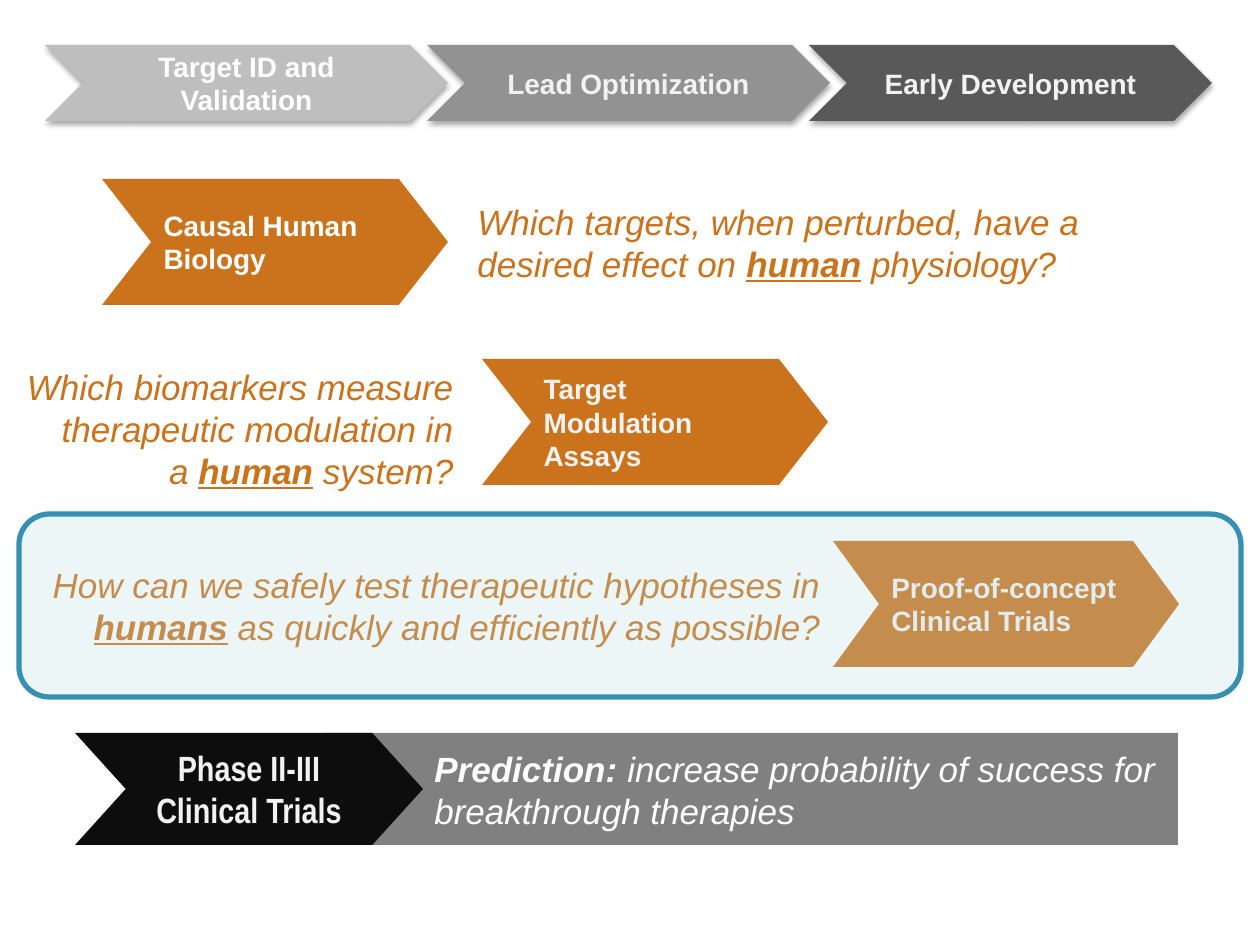
from lxml import etree
from pptx import Presentation
from pptx.dml.color import RGBColor
from pptx.enum.shapes import MSO_SHAPE as Shape
from pptx.enum.text import MSO_ANCHOR as Anchor, MSO_AUTO_SIZE as AutoSize, PP_ALIGN as Align
from pptx.oxml.ns import qn
from pptx.util import Pt

EMU_PER_PX = 914400 / 126
ORANGE, WHITE, OFF_WHITE = "CA731C", "FFFFFF", "F2F2F2"


def px(length):
    return round(length * EMU_PER_PX)


def color(value):
    return RGBColor.from_string(value)


class SlideBuilder:
    font = "Arial"
    label_size = 16
    question_size = 20

    def __init__(self, slide):
        self.slide = slide

    def shape(self, kind, box, fill, adjust=None):
        shape = self.slide.shapes.add_shape(kind, *map(px, box))
        shape.shadow.inherit = False
        shape.fill.solid()
        shape.fill.fore_color.rgb = color(fill)
        shape.line.fill.background()
        if adjust is not None:
            shape.adjustments[0] = adjust
        return shape

    def fill_paragraph(self, paragraph, pieces, size, text_color, align, font=None):
        paragraph.alignment = align
        paragraph.font.name = font or self.font
        paragraph.font.size = Pt(size)
        paragraph.font.color.rgb = color(text_color)
        for text, style in pieces:
            for index, line in enumerate(text.split("\n")):
                if index:
                    paragraph.add_line_break()
                run = paragraph.add_run()
                run.text = line
                if "b" in style:
                    run.font.bold = True
                if "u" in style:
                    run.font.underline = True

    def chevron(self, box, label, fill, text_color=OFF_WHITE, adjust=0.39,
                align=Align.LEFT, size=label_size, font=None):
        shape = self.shape(Shape.CHEVRON, box, fill, adjust)
        frame = shape.text_frame
        frame.word_wrap = True
        frame.vertical_anchor = Anchor.MIDDLE
        paragraph = frame.paragraphs[0]
        self.fill_paragraph(paragraph, [(label, "")], size, text_color, align, font)
        paragraph.font.bold = True
        return shape

    def statement(self, box, pieces, text_color=ORANGE, align=Align.LEFT):
        text_box = self.slide.shapes.add_textbox(*map(px, box))
        frame = text_box.text_frame
        frame.word_wrap = True
        frame.auto_size = AutoSize.SHAPE_TO_FIT_TEXT
        paragraph = frame.paragraphs[0]
        self.fill_paragraph(paragraph, pieces, self.question_size, text_color, align)
        paragraph.font.italic = True

    def drop_shadow(self, shape):
        effects = shape._element.spPr.find(qn("a:effectLst"))
        shadow = etree.SubElement(effects, qn("a:outerShdw"), blurRad=str(Pt(3.1)),
                                  dist=str(Pt(1.8)), dir="5400000", rotWithShape="0")
        black = etree.SubElement(shadow, qn("a:srgbClr"), val="000000")
        etree.SubElement(black, qn("a:alpha"), val="35000")

    def highlight(self, box, fill, opacity, line, width):
        shape = self.shape(Shape.ROUNDED_RECTANGLE, box, fill)
        solid = shape._element.spPr.find(qn("a:solidFill"))
        etree.SubElement(solid[0], qn("a:alpha"), val=str(opacity * 1000))
        shape.line.color.rgb = color(line)
        shape.line.width = Pt(width)


def main():
    presentation = Presentation()
    presentation.slide_width = px(1260)
    presentation.slide_height = px(945)
    builder = SlideBuilder(presentation.slides.add_slide(presentation.slide_layouts[6]))

    builder.chevron((833, 541, 346, 126), "Proof-of-concept Clinical Trials", ORANGE, adjust=0.365)
    builder.statement((37, 557, 796, 89), [
        ("How can we safely test therapeutic hypotheses in ", ""), ("humans", "bu"),
        (" as quickly and efficiently as possible?", "")], align=Align.RIGHT)

    builder.chevron((102, 179, 346, 126), "Causal Human Biology", ORANGE, WHITE)
    builder.statement((465, 194, 669, 97), [
        ("Which targets, when perturbed, have a desired effect on ", ""), ("human", "bu"),
        (" physiology?", "")])

    builder.chevron((482, 359, 346, 126), "Target Modulation Assays", ORANGE)
    builder.statement((-37, 359, 503, 127), [
        ("Which biomarkers measure therapeutic modulation in\na ", ""), ("human", "bu"),
        (" system?", "")], align=Align.RIGHT)

    stages = [
        ("Target ID and Validation", "BEBEBE", WHITE),
        ("Lead Optimization", "929292", OFF_WHITE),
        ("Early Development", "595959", OFF_WHITE),
    ]
    for index, (label, fill, text_color) in enumerate(stages):
        stage = builder.chevron((45 + 382 * index, 45, 403, 76), label, fill, text_color,
                                adjust=0.5, align=Align.CENTER)
        builder.drop_shadow(stage)

    builder.highlight((19, 514, 1222, 183), "BADDE1", 25, "3790B1", 3)

    builder.shape(Shape.RECTANGLE, (324, 733, 854, 112), "808080")
    builder.statement((422, 741, 753, 97), [
        ("Prediction: ", "b"),
        ("increase probability of success for breakthrough therapies", "")], WHITE)
    builder.chevron((75, 733, 348, 112), "Phase II-III\nClinical Trials", "0D0D0D", adjust=0.453,
                    align=Align.CENTER, size=20, font="Arial Narrow")

    presentation.save("out.pptx")


if __name__ == "__main__":
    main()
